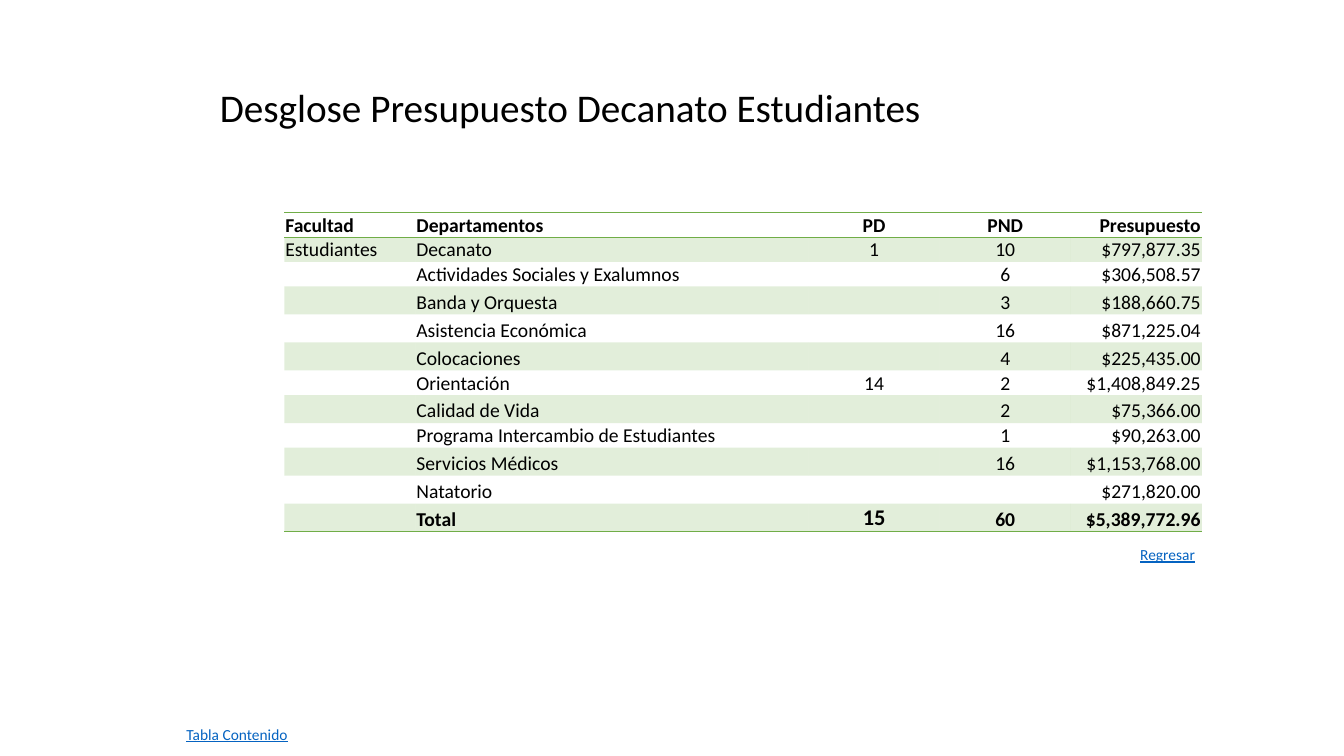
from lxml import etree
from pptx import Presentation
from pptx import util as u
from pptx.dml.color import RGBColor
from pptx.enum import text
from pptx.oxml import ns

COLORS = {"ink": "000000", "green": "70AD47", "link": "0563C1", "page": "FFFFFF"}
FONT = "Calibri"
PLAIN_TABLE_STYLE = "{2D5ABB26-0587-4C30-8999-92F81FD0307C}"
COLUMN_UNIT = u.Inches(1.3)
COLUMN_SHARES = (1, 3, 1, 1, 1)
SHORT_ROW, TALL_ROW = u.Pt(17.6), u.Pt(20)
LEFT, CENTER, RIGHT = text.PP_ALIGN.LEFT, text.PP_ALIGN.CENTER, text.PP_ALIGN.RIGHT
COLUMN_ALIGNMENTS = (LEFT, LEFT, CENTER, CENTER, RIGHT)
HEADER_ROW, TOTAL_ROW = 0, 11
MERGED_ROWS = (2, 8)
BUDGET = (
    ("Facultad", "Departamentos", "PD", "PND", "Presupuesto"),
    ("Estudiantes", "Decanato", "1", "10", "$797,877.35"),
    ("", "Actividades Sociales y Exalumnos", "", "6", "$306,508.57"),
    ("", "Banda y Orquesta", "", "3", "$188,660.75"),
    ("", "Asistencia Económica", "", "16", "$871,225.04"),
    ("", "Colocaciones", "", "4", "$225,435.00"),
    ("", "Orientación", "14", "2", "$1,408,849.25"),
    ("", "Calidad de Vida", "", "2", "$75,366.00"),
    ("", "Programa Intercambio de Estudiantes", "", "1", "$90,263.00"),
    ("", "Servicios Médicos", "", "16", "$1,153,768.00"),
    ("", "Natatorio", "", "", "$271,820.00"),
    ("", "Total", "15", "60", "$5,389,772.96"),
)


def color(name):
    return RGBColor.from_string(COLORS[name])


def style_text(paragraph, size, color_name="ink", bold=False, underline=False):
    for span in paragraph.runs:
        span.font.name = FONT
        span.font.size = u.Pt(size)
        span.font.bold = bold
        span.font.underline = underline
        span.font.color.rgb = color(color_name)


def fill_label(box, place, wording, size, color_name="ink", underline=False):
    box.left, box.top, box.width, box.height = map(u.Inches, place)
    frame = box.text_frame
    frame.text = wording
    frame.word_wrap = False
    frame.auto_size = text.MSO_AUTO_SIZE.SHAPE_TO_FIT_TEXT
    frame.vertical_anchor = text.MSO_ANCHOR.TOP
    paragraph = frame.paragraphs[0]
    paragraph.alignment = LEFT
    style_text(paragraph, size, color_name, underline=underline)


def add_link_label(page, place, wording):
    box = page.shapes.add_textbox(0, 0, 0, 0)
    fill_label(box, place, wording, 11, "link", underline=True)


def add_border(cell, side):
    properties = cell._tc.get_or_add_tcPr()
    line = etree.SubElement(properties, ns.qn(f"a:ln{side}"), w=str(u.Pt(1)))
    fill = etree.SubElement(line, ns.qn("a:solidFill"))
    etree.SubElement(fill, ns.qn("a:srgbClr"), val=COLORS["green"])


def add_band(cell):
    cell.fill.solid()
    cell.fill.fore_color.rgb = color("green")
    shade = cell._tc.tcPr.find(f"{ns.qn('a:solidFill')}/{ns.qn('a:srgbClr')}")
    etree.SubElement(shade, ns.qn("a:alpha"), val="20000")


def fill_cell(cell, row, column, wording):
    cell.margin_left = cell.margin_right = cell.margin_top = u.Inches(0.01)
    cell.margin_bottom = 0
    cell.vertical_anchor = text.MSO_ANCHOR.BOTTOM
    cell.text_frame.text = wording
    paragraph = cell.text_frame.paragraphs[0]
    paragraph.alignment = COLUMN_ALIGNMENTS[column]
    size = 16 if (row, column) == (TOTAL_ROW, 2) else 14
    style_text(paragraph, size, bold=row in (HEADER_ROW, TOTAL_ROW))
    if not wording:
        etree.SubElement(paragraph._p, ns.qn("a:endParaRPr"), sz="1400")
    if row == HEADER_ROW:
        add_border(cell, "T")
    if row in (HEADER_ROW, TOTAL_ROW):
        add_border(cell, "B")
    if row % 2:
        add_band(cell)
    else:
        cell.fill.background()


def add_budget_table(page):
    frame = page.shapes.add_table(
        len(BUDGET), len(COLUMN_SHARES), u.Inches(2.82), u.Inches(2.11),
        COLUMN_UNIT * sum(COLUMN_SHARES), SHORT_ROW * len(BUDGET))
    table = frame.table
    table._tbl.tblPr.find(ns.qn("a:tableStyleId")).text = PLAIN_TABLE_STYLE
    for column, share in zip(table.columns, COLUMN_SHARES):
        column.width = COLUMN_UNIT * share
    for row, values in enumerate(BUDGET):
        is_short = row in MERGED_ROWS or (values[2] and row != TOTAL_ROW)
        table.rows[row].height = SHORT_ROW if is_short else TALL_ROW
        for column, wording in enumerate(values):
            fill_cell(table.cell(row, column), row, column, wording)
    for row in MERGED_ROWS:
        table.cell(row, 1).merge(table.cell(row, 2))


def main():
    deck = Presentation()
    deck.slide_width, deck.slide_height = u.Inches(13.33), u.Inches(7.5)
    page = deck.slides.add_slide(deck.slide_layouts[5])
    page.background.fill.solid()
    page.background.fill.fore_color.rgb = color("page")
    add_budget_table(page)
    fill_label(page.shapes.title, (2.08, 0.78, 7.23, 0.57),
               "Desglose Presupuesto Decanato Estudiantes", 28)
    add_link_label(page, (11.21, 5.36, 0.75, 0.29), "Regresar")
    add_link_label(page, (1.75, 7.14, 1.22, 0.29), "Tabla Contenido")
    deck.save("out.pptx")


if __name__ == "__main__":
    main()
